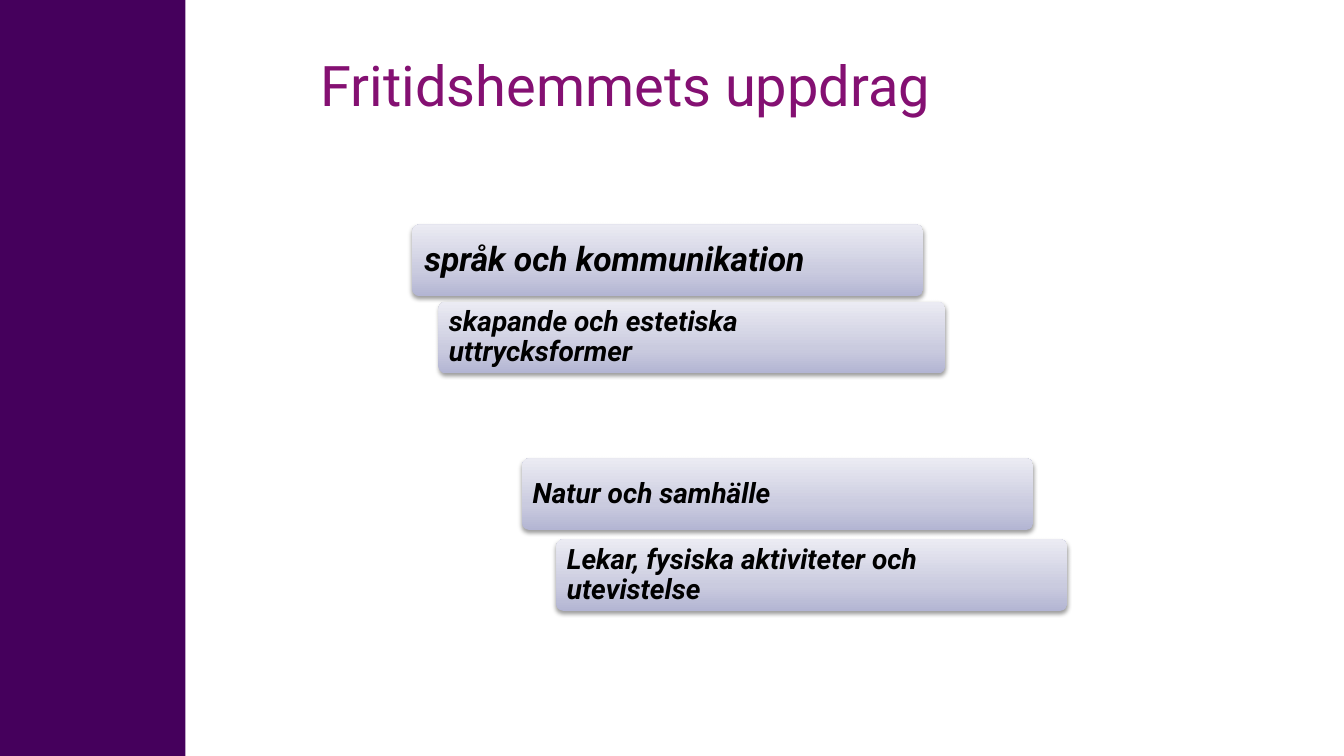
"""Builds the slide 'Fritidshemmets uppdrag' with four stepped topic bars."""
from pptx import Presentation
from pptx.dml.color import RGBColor
from pptx.enum.shapes import MSO_SHAPE
from pptx.enum.text import MSO_ANCHOR
from pptx.oxml import parse_xml
from pptx.oxml.ns import nsdecls
from pptx.util import Pt

DARK_PURPLE = RGBColor(0x45, 0x00, 0x5C)
TITLE_PURPLE = RGBColor(0x84, 0x10, 0x72)
BLACK = RGBColor(0x00, 0x00, 0x00)
GRADIENT = [
    (0, RGBColor(0xB3, 0xB5, 0xD3)),
    (35, RGBColor(0xCA, 0xCB, 0xDF)),
    (100, RGBColor(0xEB, 0xEB, 0xF3)),
]
BAR_HEIGHT = 51.2
TEXT_OFFSET = 1.5

stops = "".join(
    f'<a:gs pos="{position * 1000}"><a:srgbClr val="{color}"/></a:gs>'
    for position, color in GRADIENT
)
BAR_FILL = (
    f'<a:gradFill {nsdecls("a")} rotWithShape="1"><a:gsLst>{stops}</a:gsLst>'
    '<a:lin ang="16200000" scaled="0"/></a:gradFill>'
)
BAR_SHADOW = (
    f'<a:effectLst {nsdecls("a")}>'
    f'<a:outerShdw blurRad="{Pt(3.1)}" dist="{Pt(1.6)}" dir="5400000" rotWithShape="0">'
    f'<a:srgbClr val="{BLACK}"><a:alpha val="38000"/></a:srgbClr>'
    '</a:outerShdw></a:effectLst>'
)


def add_text(page, text, left, top, width, height, size, color):
    """Adds a wrapping text box with one paragraph and returns the box."""
    box = page.shapes.add_textbox(Pt(left), Pt(top), Pt(width), Pt(height))
    box.text_frame.word_wrap = True
    para = box.text_frame.paragraphs[0]
    para.line_spacing = 0.9
    span = para.add_run()
    span.text = text
    span.font.name = "Roboto"
    span.font.size = Pt(size)
    span.font.color.rgb = color
    return box


deck = Presentation()
deck.slide_width, deck.slide_height = Pt(960), Pt(540)
page = deck.slides.add_slide(deck.slide_layouts[6])

side_band = page.shapes.add_shape(MSO_SHAPE.RECTANGLE, 0, 0, Pt(132.5), Pt(540))
side_band.shadow.inherit = False
side_band.fill.solid()
side_band.fill.fore_color.rgb = DARK_PURPLE
side_band.line.fill.background()

topics = [
    ("språk och kommunikation", 294.5, 160.4, 365, 304, 24, 7.2),
    ("skapande och estetiska uttrycksformer", 313.2, 215.6, 362, 299, 20, 6),
    ("Natur och samhälle", 373, 327.4, 365, 302, 20, 6),
    ("Lekar, fysiska aktiviteter och utevistelse", 397.4, 385.2, 365, 302, 20, 6),
]
for text, left, top, bar_width, text_width, size, inset in topics:
    bar = page.shapes.add_shape(
        MSO_SHAPE.ROUNDED_RECTANGLE, Pt(left), Pt(top), Pt(bar_width), Pt(BAR_HEIGHT)
    )
    bar.adjustments[0] = 0.1
    properties = bar.element.spPr
    properties.append(parse_xml(BAR_FILL))
    bar.line.fill.background()
    properties.append(parse_xml(BAR_SHADOW))

    label = add_text(
        page, text, left + TEXT_OFFSET, top + TEXT_OFFSET,
        text_width, BAR_HEIGHT - 2 * TEXT_OFFSET, size, BLACK,
    )
    frame = label.text_frame
    frame.vertical_anchor = MSO_ANCHOR.MIDDLE
    frame.margin_left = frame.margin_right = Pt(inset)
    frame.margin_top = frame.margin_bottom = Pt(inset)
    para = frame.paragraphs[0]
    para.space_after = Pt(6)
    para.runs[0].font.bold = True
    para.runs[0].font.italic = True

add_text(page, "Fritidshemmets uppdrag", 222, 38.2, 738, 98.6, 40, TITLE_PURPLE)

deck.save("out.pptx")
